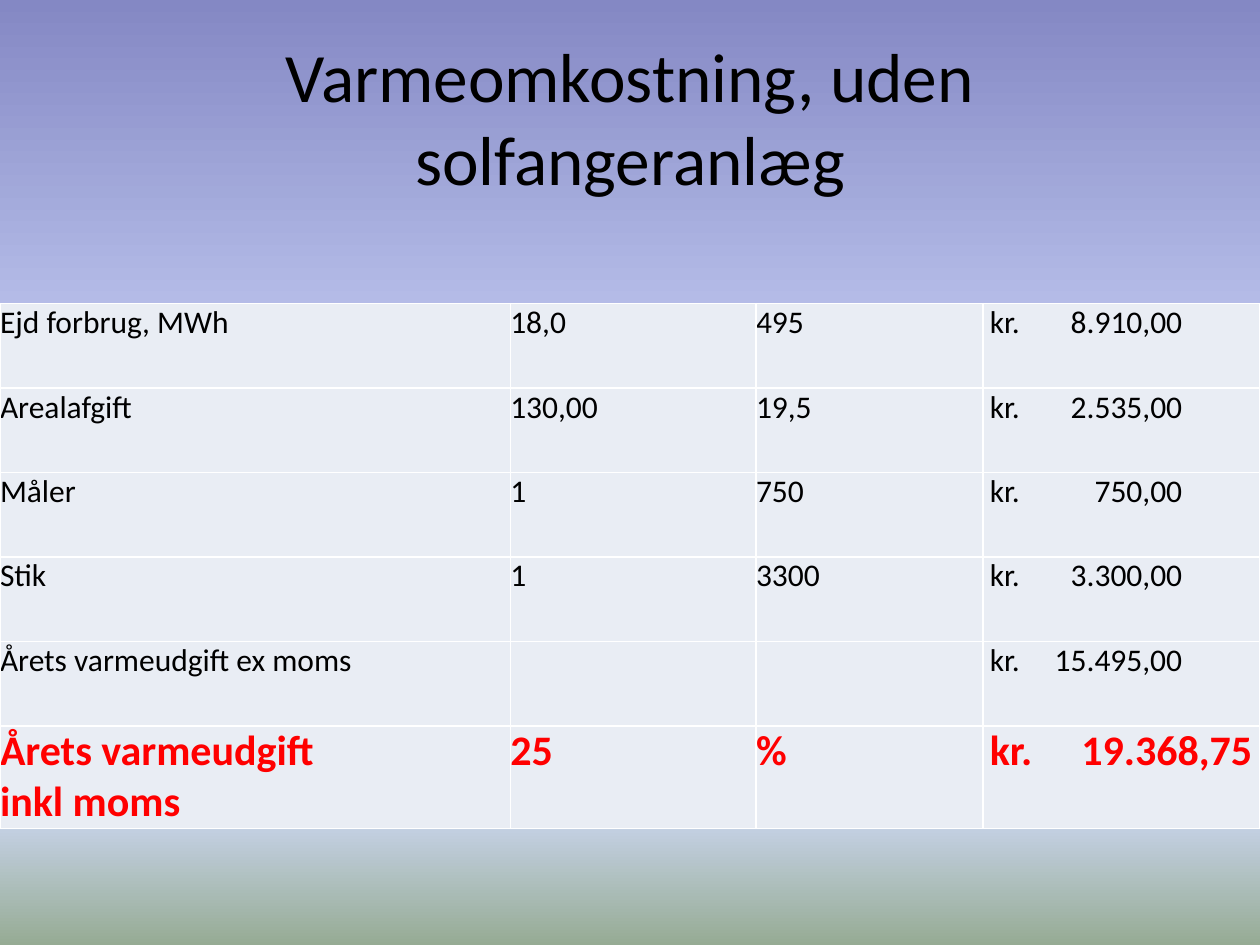
from dataclasses import dataclass

from lxml.etree import SubElement
from pptx import Presentation
from pptx.dml.color import RGBColor
from pptx.enum.text import MSO_ANCHOR, PP_ALIGN
from pptx.oxml.ns import qn
from pptx.util import Pt


@dataclass(frozen=True)
class Theme:
    font: str = "Calibri"
    text: str = "000000"
    total: str = "FF0000"
    cell: str = "E9EDF4"
    border: str = "FFFFFF"
    sky: tuple = ((0, "8488C4"), (53, "D4DEFF"), (83, "D4DEFF"), (100, "96AB94"))
    title_size: float = 39.6
    body_size: float = 18
    total_size: float = 24


THEME = Theme()

COSTS = [
    ("Ejd forbrug, MWh", "18,0", "495", "kr.\t8.910,00"),
    ("Arealafgift", "130,00", "19,5", "kr.\t2.535,00"),
    ("Måler", "1", "750", "kr.\t750,00"),
    ("Stik", "1", "3300", "kr.\t3.300,00"),
    ("Årets varmeudgift ex moms", "", "", "kr.\t15.495,00"),
    ("Årets varmeudgift\ninkl moms", "25", "%", "kr.\t19.368,75"),
]
COLUMN_WIDTHS = (291.6, 140.4, 129.6, 158.4)
AMOUNT_INDENT = 4


def style_paragraph(p, size, color, bold=False):
    p.font.name = THEME.font
    p.font.size = Pt(size)
    p.font.bold = bold
    p.font.color.rgb = RGBColor.from_string(color)


def add_color(parent, color):
    SubElement(parent, qn("a:srgbClr"), val=color)


def add_right_tab(p, position):
    tabs = SubElement(p._p.get_or_add_pPr(), qn("a:tabLst"))
    SubElement(tabs, qn("a:tab"), pos=str(Pt(position)), algn="r")


def set_borders(cell):
    tc_pr = cell._tc.get_or_add_tcPr()
    for side in ("a:lnL", "a:lnR", "a:lnT", "a:lnB"):
        line = SubElement(tc_pr, qn(side), w=str(Pt(1)))
        add_color(SubElement(line, qn("a:solidFill")), THEME.border)


def fill_background(s):
    fill = s.background.fill
    fill.gradient()
    fill.gradient_angle = 270
    stops = s._element.find(".//" + qn("a:gsLst"))
    for stop in list(stops):
        stops.remove(stop)
    for position, color in THEME.sky:
        add_color(SubElement(stops, qn("a:gs"), pos=str(position * 1000)), color)


def place_title(s, text, left, top, width, height):
    sp = s.shapes.title
    sp.left, sp.top, sp.width, sp.height = Pt(left), Pt(top), Pt(width), Pt(height)
    tf = sp.text_frame
    tf.text = text
    tf.word_wrap = True
    tf.vertical_anchor = MSO_ANCHOR.MIDDLE
    p = tf.paragraphs[0]
    p.alignment = PP_ALIGN.CENTER
    style_paragraph(p, THEME.title_size, THEME.text)


def fill_cell(cell, text, is_amount, is_total):
    cell.margin_left = Pt(AMOUNT_INDENT if is_amount else 0)
    cell.margin_right = cell.margin_top = cell.margin_bottom = 0
    set_borders(cell)
    cell.fill.solid()
    cell.fill.fore_color.rgb = RGBColor.from_string(THEME.cell)
    cell.text = text
    for p in cell.text_frame.paragraphs:
        if is_amount:
            add_right_tab(p, 150 if is_total else 110)
        if is_total:
            style_paragraph(p, THEME.total_size, THEME.total, bold=True)
        else:
            style_paragraph(p, THEME.body_size, THEME.text)


def place_cost_table(s, left, top, width, height):
    frame = s.shapes.add_table(
        len(COSTS), len(COLUMN_WIDTHS), Pt(left), Pt(top), Pt(width), Pt(height)
    )
    table = frame.table
    table.first_row = table.horz_banding = False
    for column, column_width in zip(table.columns, COLUMN_WIDTHS):
        column.width = Pt(column_width)
    for i, row in enumerate(COSTS):
        for j, text in enumerate(row):
            is_amount = j == len(row) - 1
            is_total = i == len(COSTS) - 1
            fill_cell(table.cell(i, j), text, is_amount, is_total)


def main():
    prs = Presentation()
    prs.slide_width, prs.slide_height = Pt(720), Pt(540)
    s = prs.slides.add_slide(prs.slide_layouts[5])
    fill_background(s)
    place_title(s, "Varmeomkostning, uden solfangeranlæg", 36, 21.6, 648, 90)
    place_cost_table(s, 0, 173.5, 720, 289.5)
    prs.save("out.pptx")


if __name__ == "__main__":
    main()
